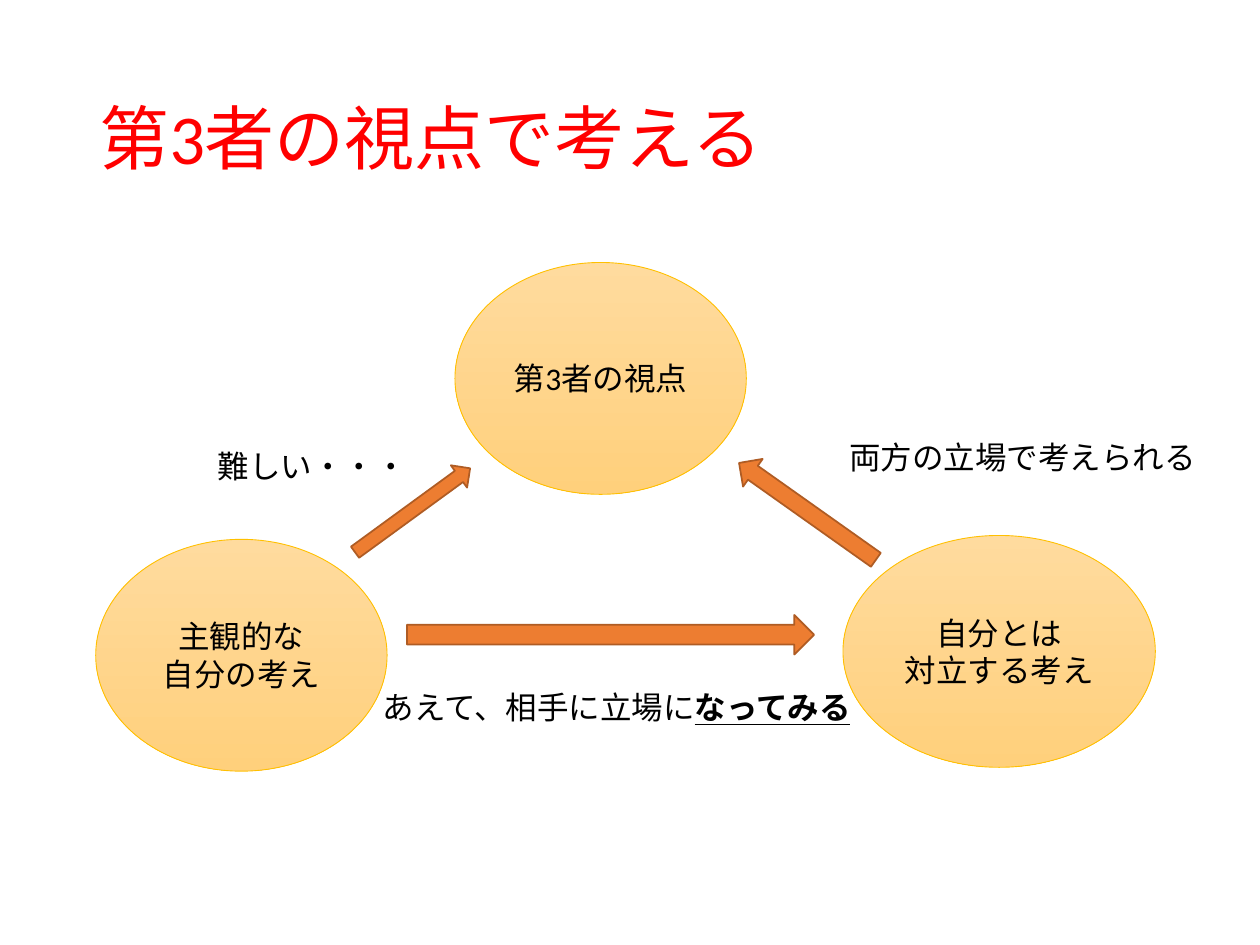
from dataclasses import dataclass
from typing import Any, NamedTuple

from pptx import Presentation
from pptx.dml.color import RGBColor
from pptx.enum import shapes, text
from pptx.util import Pt


@dataclass(frozen=True)
class Theme:
    font: str = "Calibri"
    title_size: float = 40
    body_size: float = 18
    title_color: str = "FF0000"
    text_color: str = "000000"
    oval_top: str = "FFDB9E"
    oval_bottom: str = "FFD07C"
    oval_line: str = "FFC000"
    arrow_fill: str = "ED7D31"
    arrow_line: str = "AF5C24"


class Box(NamedTuple):
    left: float
    top: float
    width: float
    height: float

    def lengths(self) -> list[Pt]:
        return [Pt(value) for value in self]


class Viewpoint(NamedTuple):
    box: Box
    lines: list[str]


class Arrow(NamedTuple):
    box: Box
    rotation: float


class Label(NamedTuple):
    box: Box
    plain: str
    stressed: str = ""


THEME = Theme()
OVAL_HEIGHT = 132.5
LABEL_HEIGHT = 29

VIEWPOINTS = [
    Viewpoint(Box(260, 150, 166.5, OVAL_HEIGHT), ["第3者の視点"]),
    Viewpoint(Box(54.7, 308.2, 166.5, OVAL_HEIGHT), ["主観的な", "自分の考え"]),
    Viewpoint(Box(481.7, 306, 178.5, OVAL_HEIGHT), ["自分とは", "対立する考え"]),
]
ARROWS = [
    Arrow(Box(195.1, 283.7, 81.4, 15.8), 323.9),
    Arrow(Box(232.6, 351.4, 232.6, 22.6), 0),
    Arrow(Box(413.5, 282.5, 95.8, 19.4), 215.3),
]
LABELS = [
    Label(Box(117.4, 252, 134.6, LABEL_HEIGHT), "難しい・・・"),
    Label(Box(211.7, 389.7, 293.8, LABEL_HEIGHT), "あえて、相手に立場に", "なってみる"),
    Label(Box(478.1, 247, 222.5, LABEL_HEIGHT), "両方の立場で考えられる"),
]


def apply_format(target: Any, values: dict[str, Any]) -> None:
    for name, value in values.items():
        setattr(target, name, value)


def add_run(paragraph: Any, words: str, size: float = THEME.body_size,
            color: str = THEME.text_color, **extra: Any) -> None:
    run = paragraph.add_run()
    run.text = words
    apply_format(run.font, {"name": THEME.font, "size": Pt(size), **extra})
    run.font.color.rgb = RGBColor.from_string(color)


def set_line(shape: Any, color: str, width: float) -> None:
    shape.line.color.rgb = RGBColor.from_string(color)
    shape.line.width = Pt(width)


def add_title(slide: Any, words: str) -> None:
    title = slide.shapes.title
    box = Box(49.7, 28.8, 620.6, 104.4).lengths()
    apply_format(title, dict(zip(Box._fields, box)))
    apply_format(title.text_frame, {
        "vertical_anchor": text.MSO_ANCHOR.MIDDLE,
        "auto_size": text.MSO_AUTO_SIZE.NONE,
        "word_wrap": True,
    })
    paragraph = title.text_frame.paragraphs[0]
    apply_format(paragraph, {"alignment": text.PP_ALIGN.LEFT, "line_spacing": 0.9})
    add_run(paragraph, words, THEME.title_size, THEME.title_color)


def add_viewpoint(slide: Any, viewpoint: Viewpoint) -> None:
    oval = slide.shapes.add_shape(shapes.MSO_SHAPE.OVAL, *viewpoint.box.lengths())
    oval.shadow.inherit = False
    oval.fill.gradient()
    oval.fill.gradient_angle = 270
    colors = (THEME.oval_top, THEME.oval_bottom)
    for position, (stop, color) in enumerate(zip(oval.fill.gradient_stops, colors)):
        stop.position = position
        stop.color.rgb = RGBColor.from_string(color)
    set_line(oval, THEME.oval_line, 0.5)
    frame = oval.text_frame
    apply_format(frame, {"vertical_anchor": text.MSO_ANCHOR.MIDDLE, "word_wrap": True})
    for index, line in enumerate(viewpoint.lines):
        paragraph = frame.add_paragraph() if index else frame.paragraphs[0]
        paragraph.alignment = text.PP_ALIGN.CENTER
        add_run(paragraph, line)


def add_arrow(slide: Any, arrow: Arrow) -> None:
    shape = slide.shapes.add_shape(shapes.MSO_SHAPE.RIGHT_ARROW, *arrow.box.lengths())
    shape.shadow.inherit = False
    shape.rotation = arrow.rotation
    shape.fill.solid()
    shape.fill.fore_color.rgb = RGBColor.from_string(THEME.arrow_fill)
    set_line(shape, THEME.arrow_line, 1)


def add_label(slide: Any, label: Label) -> None:
    frame = slide.shapes.add_textbox(*label.box.lengths()).text_frame
    apply_format(frame, {
        "word_wrap": True,
        "auto_size": text.MSO_AUTO_SIZE.SHAPE_TO_FIT_TEXT,
    })
    add_run(frame.paragraphs[0], label.plain)
    if label.stressed:
        add_run(frame.paragraphs[0], label.stressed, bold=True, underline=True)


def main() -> None:
    presentation = Presentation()
    apply_format(presentation, {"slide_width": Pt(720), "slide_height": Pt(540)})
    title_only = presentation.slide_layouts.get_by_name("Title Only")
    slide = presentation.slides.add_slide(title_only)
    add_title(slide, "第3者の視点で考える")
    for viewpoint in VIEWPOINTS:
        add_viewpoint(slide, viewpoint)
    for arrow in ARROWS:
        add_arrow(slide, arrow)
    for label in LABELS:
        add_label(slide, label)
    presentation.save("out.pptx")


if __name__ == "__main__":
    main()
